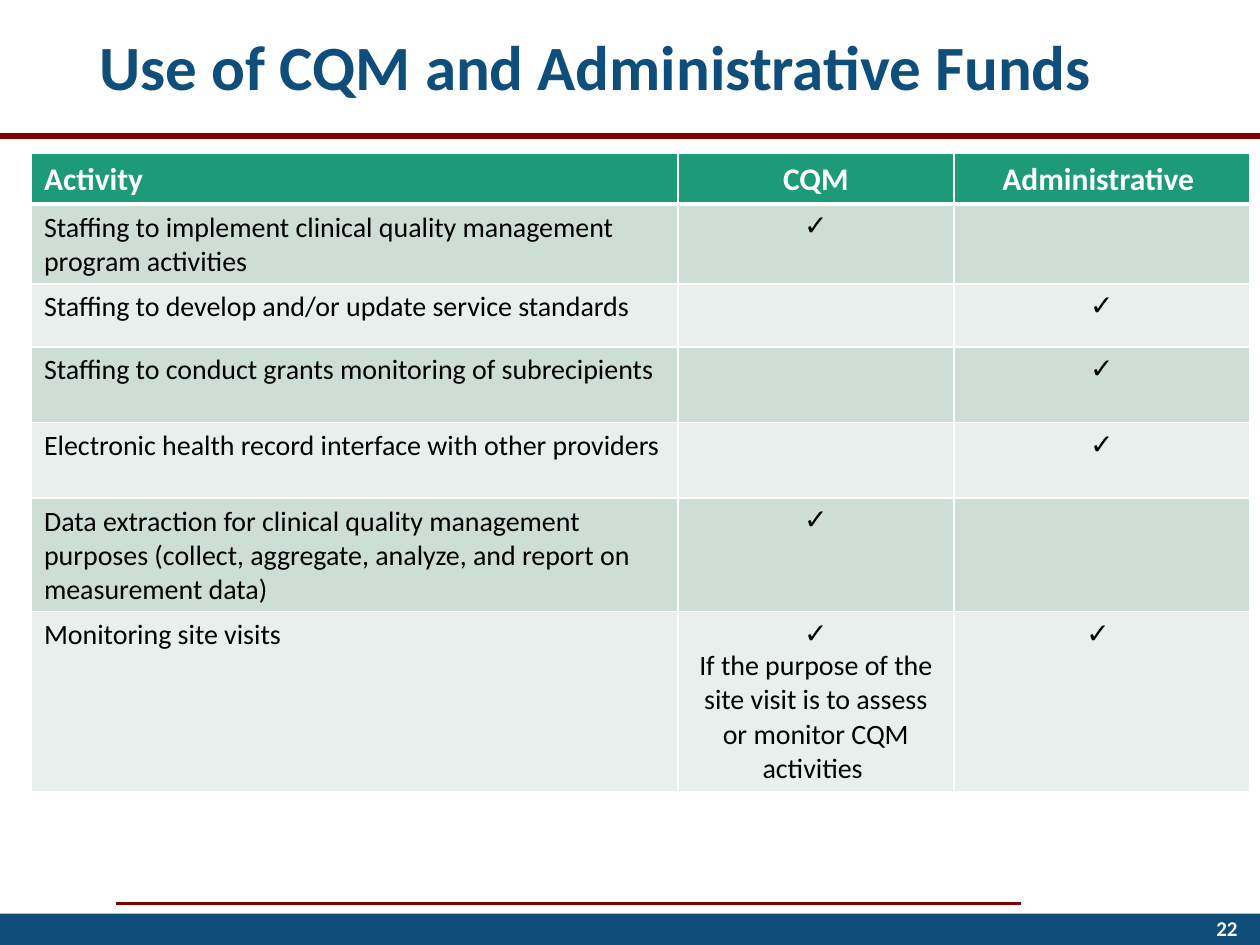
from dataclasses import dataclass

from lxml.etree import SubElement
from pptx import Presentation
from pptx.dml.color import RGBColor
from pptx.enum.shapes import MSO_CONNECTOR as Connector, MSO_SHAPE as Shape
from pptx.enum.text import MSO_ANCHOR as Anchor, MSO_AUTO_SIZE as AutoSize, PP_ALIGN as Align
from pptx.oxml.ns import qn
from pptx.util import Inches, Pt


@dataclass(frozen=True)
class Theme:
    """Colours, fonts and type sizes of the deck."""
    navy: str = "0F4D7B"
    maroon: str = "800000"
    green: str = "1D9A78"
    bands: tuple = ("CDDED6", "E8EFEC")
    white: str = "FFFFFF"
    black: str = "000000"
    font: str = "Calibri"
    mark_font: str = "Arial"
    title: int = 36
    header: int = 18
    body: int = 16
    number: int = 12


THEME = Theme()
CHECK = "✓"
COLUMNS = (5.13, 2.19, 2.35)
ROW_HEIGHTS = (0.38, 0.6, 0.5, 0.6, 0.6, 0.85, 1.35)
HEADINGS = ("Activity", "CQM", "Administrative ")
ACTIVITIES = (
    ("Staffing to implement clinical quality management program activities", CHECK, ""),
    ("Staffing to develop and/or update service standards", "", CHECK),
    ("Staffing to conduct grants monitoring of subrecipients", "", CHECK),
    ("Electronic health record interface with other providers", "", CHECK),
    ("Data extraction for clinical quality management purposes "
     "(collect, aggregate, analyze, and report on measurement data)", CHECK, ""),
    ("Monitoring site visits",
     CHECK + "\nIf the purpose of the site visit is to assess or monitor CQM activities ",
     CHECK + " "),
)


def write(frame, text, size, color=THEME.black, bold=False, align=Align.LEFT, spacing=None):
    """Fill a text frame, one paragraph for each line of text."""
    for index, line in enumerate(text.split("\n")):
        para = frame.add_paragraph() if index else frame.paragraphs[0]
        para.alignment = align
        para.line_spacing = spacing
        span = para.add_run()
        span.text = line
        span.font.name = THEME.mark_font if line.startswith(CHECK) else THEME.font
        span.font.size = Pt(size)
        span.font.bold = bold
        span.font.color.rgb = RGBColor.from_string(color)


def draw_borders(cell, color, bottom):
    """Outline a table cell with one-point lines and a chosen bottom width."""
    properties = cell._tc.get_or_add_tcPr()
    for tag, width in (("a:lnL", 1), ("a:lnR", 1), ("a:lnT", 1), ("a:lnB", bottom)):
        line = SubElement(properties, qn(tag), w=str(Pt(width)))
        fill = SubElement(line, qn("a:solidFill"))
        SubElement(fill, qn("a:srgbClr"), val=color)


class SlideBuilder:
    """Draws themed elements on the current slide."""

    def __init__(self, page, theme):
        """Keep the slide and its style."""
        self.page = page
        self.theme = theme

    def title(self, text, left, top, width, height):
        """Place and format the title placeholder."""
        box = self.page.shapes.title
        box.left, box.top, box.width, box.height = map(Inches, (left, top, width, height))
        frame = box.text_frame
        frame.auto_size = AutoSize.NONE
        frame.vertical_anchor = Anchor.MIDDLE
        write(frame, text, self.theme.title, self.theme.navy, bold=True, spacing=0.9)

    def rule(self, left, right, y, weight):
        """Draw a horizontal line."""
        line = self.page.shapes.add_connector(
            Connector.STRAIGHT, Inches(left), Inches(y), Inches(right), Inches(y))
        line.line.color.rgb = RGBColor.from_string(self.theme.maroon)
        line.line.width = Pt(weight)
        SubElement(line._element.spPr, qn("a:effectLst"))

    def band(self, left, top, width, height):
        """Draw a plain filled bar."""
        bar = self.page.shapes.add_shape(
            Shape.RECTANGLE, Inches(left), Inches(top), Inches(width), Inches(height))
        bar.shadow.inherit = False
        bar.fill.solid()
        bar.fill.fore_color.rgb = RGBColor.from_string(self.theme.navy)
        bar.line.fill.background()

    def page_number(self, text, left, top, width, height):
        """Write the page number, aligned right."""
        box = self.page.shapes.add_textbox(
            Inches(left), Inches(top), Inches(width), Inches(height))
        frame = box.text_frame
        frame.word_wrap = True
        frame.vertical_anchor = Anchor.MIDDLE
        write(frame, text, self.theme.number, self.theme.white, bold=True, align=Align.RIGHT)

    def table(self, rows, left, top, widths, heights):
        """Build a table with a header row and alternating bands."""
        table = self.page.shapes.add_table(
            len(rows), len(widths), Inches(left), Inches(top),
            Inches(sum(widths)), Inches(sum(heights))).table
        table.first_row = table.horz_banding = False
        for column, width in zip(table.columns, widths):
            column.width = Inches(width)
        for row, height in zip(table.rows, heights):
            row.height = Inches(height)
        for row_index, texts in enumerate(rows):
            for column_index, text in enumerate(texts):
                self.cell(table.cell(row_index, column_index), text, row_index, column_index)

    def cell(self, cell, text, row, column):
        """Format one table cell by its row and column."""
        theme = self.theme
        header = row == 0
        draw_borders(cell, theme.white, bottom=3 if header else 1)
        cell.fill.solid()
        cell.fill.fore_color.rgb = RGBColor.from_string(
            theme.green if header else theme.bands[(row - 1) % 2])
        if text:
            write(cell.text_frame, text,
                  size=theme.header if header else theme.body,
                  color=theme.white if header else theme.black,
                  bold=header, align=Align.CENTER if column else Align.LEFT)


def main():
    """Build and save the slide."""
    deck = Presentation()
    deck.slide_width, deck.slide_height = Inches(10), Inches(7.5)
    page = deck.slides.add_slide(deck.slide_layouts.get_by_name("Title Only"))
    builder = SlideBuilder(page, THEME)
    builder.rule(0.92, 8.1, 7.17, weight=1.5)
    builder.band(0, 7.25, 10, 0.25)
    builder.rule(0, 10, 1.08, weight=3)
    builder.title("Use of CQM and Administrative Funds", 0.69, -0.17, 8.62, 1.45)
    builder.page_number("22", 7.67, 7.17, 2.25, 0.4)
    builder.table((HEADINGS, *ACTIVITIES), 0.25, 1.22, COLUMNS, ROW_HEIGHTS)
    deck.save("out.pptx")


if __name__ == "__main__":
    main()
